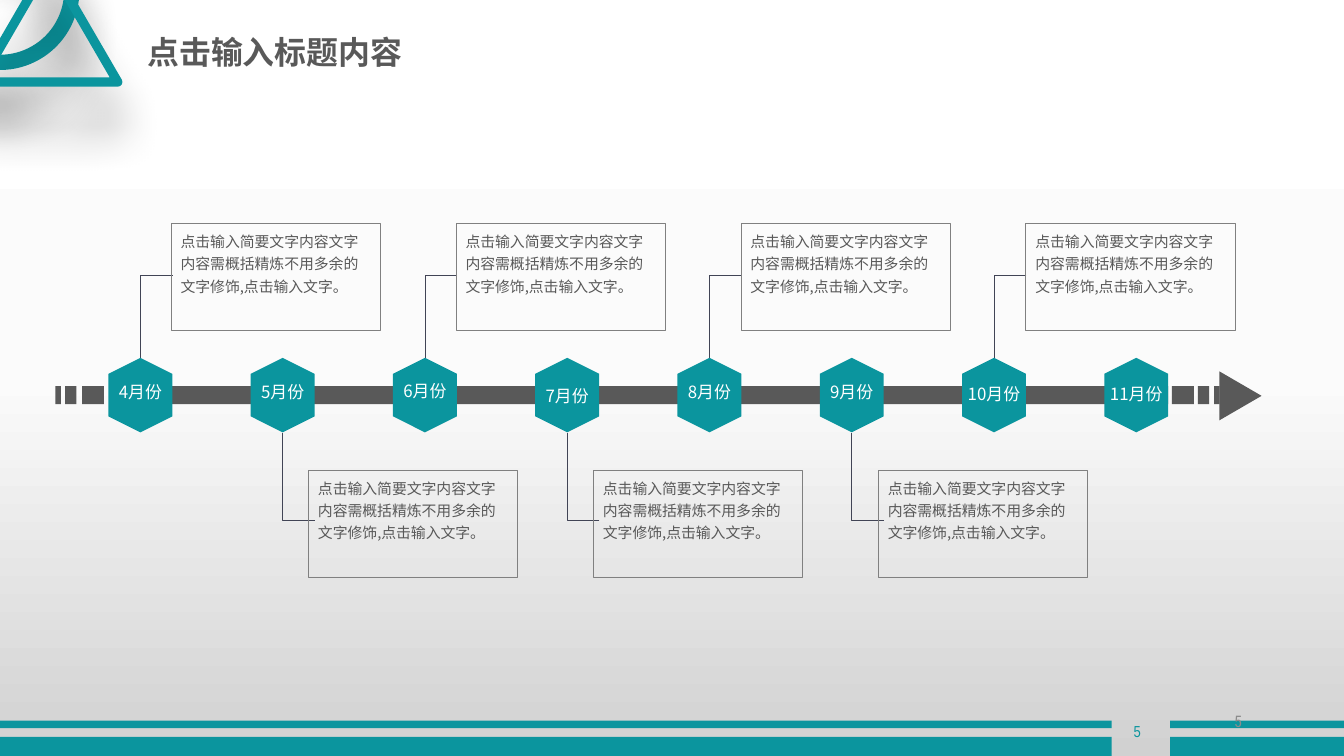
import lxml.etree
import copy
import pptx
import pptx.util
import pptx.dml.color
import pptx.enum.shapes
import pptx.enum.text
import pptx.oxml
import pptx.oxml.ns

Cm, Pt = pptx.util.Cm, pptx.util.Pt
KIND = pptx.enum.shapes.MSO_SHAPE
ALIGN = pptx.enum.text.PP_ALIGN
ANCHOR = pptx.enum.text.MSO_ANCHOR
qn = pptx.oxml.ns.qn
rgb = pptx.dml.color.RGBColor.from_string

HUES = {"teal": "0B959E", "dark": "595959", "stem": "414455", "edge": "808080",
        "page": "8C8C8C", "white": "FFFFFF", "pale": "FBFBFB", "grey": "D1D1D1"}
SANS = "Noto Sans CJK SC"
SHADE = ('<a:outerShdw xmlns:a="http://schemas.openxmlformats.org/drawingml/2006/main" '
         'blurRad="419100" dist="419100" dir="5400000" algn="t" rotWithShape="0">'
         '<a:srgbClr val="000000"><a:alpha val="43000"/></a:srgbClr></a:outerShdw>')

deck = pptx.Presentation()
deck.slide_width, deck.slide_height = Cm(35.71), Cm(20.09)
slide = deck.slides.add_slide(deck.slide_layouts[5])


def draw(kind, x, y, w, h, fill=None, line=None, width=0.75, turn=0):
    form = slide.shapes.add_shape(kind, Cm(x), Cm(y), Cm(w), Cm(h))
    form.rotation = turn
    form.shadow.inherit = False
    if fill:
        form.fill.solid()
        form.fill.fore_color.rgb = rgb(HUES[fill])
    else:
        form.fill.background()
    if line:
        form.line.color.rgb = rgb(HUES[line])
        form.line.width = Pt(width)
    else:
        form.line.fill.background()
    return form


def write(form, text, size, hue, font=SANS, bold=False, align=ALIGN.LEFT,
          anchor=ANCHOR.MIDDLE, wrap=True, space=1.0, before=0):
    frame = form.text_frame
    frame.text = text
    frame.word_wrap = wrap
    frame.auto_size = pptx.enum.text.MSO_AUTO_SIZE.NONE
    frame.vertical_anchor = anchor
    for para in frame.paragraphs:
        para.alignment = align
        para.line_spacing = space
        para.space_before = Pt(before)
        for run in para.runs:
            run.font.size = Pt(size)
            run.font.bold = bold
            run.font.color.rgb = rgb(HUES[hue])
            run.font.name = font
            lxml.etree.SubElement(run._r.get_or_add_rPr(), qn("a:ea"), typeface=font)


back = slide.background.fill
back.gradient()
back.gradient_angle = 270
stops = slide.element.find(".//" + qn("a:gsLst"))
stops.append(copy.deepcopy(stops[0]))
for stop, place, hue in zip(back.gradient_stops, (0, 0.5, 1), ("white", "pale", "grey")):
    stop.position = place
    stop.color.rgb = rgb(HUES[hue])

ring = draw(KIND.DONUT, -2.11, -2.36, 4.22, 4.22, fill="teal")
ring.adjustments[0] = 0.096
peak = draw(KIND.ISOSCELES_TRIANGLE, -0.53, -0.97, 3.66, 3.15, line="teal", width=7)
for form in (ring, peak):
    form.element.spPr.find(qn("a:effectLst")).append(pptx.oxml.parse_xml(SHADE))

for x, w in ((0, 29.54), (31.09, 4.62)):
    draw(KIND.RECTANGLE, x, 19.58, w, 0.51, fill="teal")
    draw(KIND.RECTANGLE, x, 19.15, w, 0.2, fill="teal")

title = slide.shapes.title
title.left, title.top, title.width, title.height = Cm(3.66), Cm(0.89), Cm(9.8), Cm(1.14)
write(title, "点击输入标题内容", 24, "dark", bold=True, space=0.8, before=10)

for x, w in ((1.47, 0.15), (1.73, 0.3), (2.18, 0.58), (2.9, 28.14),
             (31.14, 0.58), (31.83, 0.3), (32.26, 0.15)):
    draw(KIND.RECTANGLE, x, 10.26, w, 0.48, fill="dark")
draw(KIND.ISOSCELES_TRIANGLE, 32.31, 9.96, 1.3, 1.12, fill="dark", turn=90)

NOTE = "点击输入简要文字内容文字\n内容需概括精炼不用多余的文字修饰,点击输入文字。"
TOPS = (10.01, 10.03, 9.98, 10.11, 10.03, 10.01, 10.08, 10.08)
WIDTHS = (2.21, 2.08, 2.39, 2.11, 2.29, 2.44, 2.54, 2.69)
for i, (top, wide) in enumerate(zip(TOPS, WIDTHS)):
    mid = 3.73 + 3.78 * i
    above = i % 2 == 0
    if i < 7:
        bend, foot = (7.32, 9.53) if above else (13.84, 11.51)
        stem = slide.shapes.add_connector(pptx.enum.shapes.MSO_CONNECTOR.ELBOW,
                                          Cm(mid + 0.86), Cm(bend), Cm(mid), Cm(foot))
        stem.line.color.rgb = rgb(HUES["stem"])
        stem.line.width = Pt(0.5)
        shape = stem.element.spPr
        shape.find(qn("a:prstGeom")).set("prst", "bentConnector2")
        lxml.etree.SubElement(shape, qn("a:effectLst"))
        left, high = (4.55, 5.94) if above else (8.2, 12.5)
        card = draw(KIND.RECTANGLE, left + 7.57 * (i // 2), high, 5.56, 2.84,
                    line="edge", width=0.25 if i == 2 else 0.75)
        write(card, NOTE, 11.2, "dark", anchor=ANCHOR.TOP, space=1.25)
    draw(KIND.HEXAGON, mid - 0.99, 9.65, 1.98, 1.7, fill="teal", turn=90)
    label = slide.shapes.add_textbox(Cm(mid - wide / 2), Cm(top), Cm(wide), Cm(0.79))
    write(label, f"{i + 4}月份", 12.7, "white", align=ALIGN.CENTER, wrap=False)

for x, y, w, h, hue, font, align in (
        (29.57, 18.82, 1.3, 1.22, "teal", "Arial Narrow", ALIGN.CENTER),
        (25.22, 18.62, 8.03, 1.07, "page", "Roboto Condensed", ALIGN.RIGHT)):
    label = slide.shapes.add_textbox(Cm(x), Cm(y), Cm(w), Cm(h))
    write(label, "5", 12, hue, font=font, align=align)

deck.save("out.pptx")
